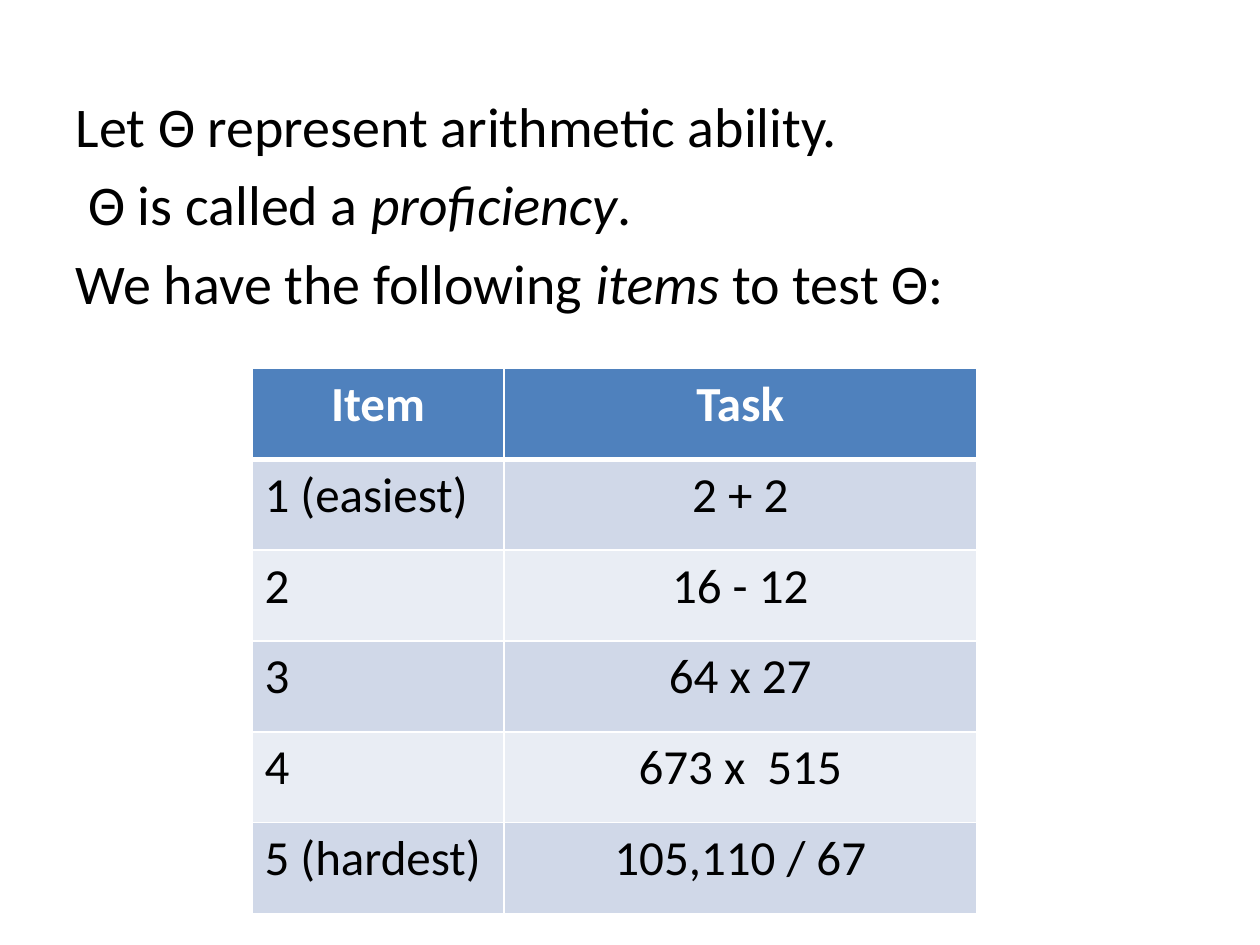
from lxml import etree
from pptx import Presentation, util as u
from pptx.dml.color import RGBColor
from pptx.enum import text
from pptx.oxml import ns

WIDTH, HEIGHT = u.Inches(10), u.Inches(7.5)
FONT = "Calibri"
WHITE, BLACK, HEADER = "FFFFFF", "000000", "4F81BD"
BANDS = ("D0D8E8", "E9EDF4")

# Each statement is a list of (wording, italic) runs
STATEMENTS = [
    [("Let Θ represent arithmetic ability.", False)],
    [(" Θ is called a ", False), ("proficiency", True), (".", False)],
    [("We have the following ", False), ("items", True), (" to test Θ:", False)],
]
ITEMS = [
    ("Item", "Task"),
    ("1 (easiest)", "2 + 2"),
    ("2", "16 - 12"),
    ("3", "64 x 27"),
    ("4", "673 x  515"),
    ("5 (hardest)", "105,110 / 67"),
]


def color(value):
    return RGBColor.from_string(value)


def share(left, top, width, height):
    """Turn shares of the slide's size into a box."""
    return (int(left * WIDTH), int(top * HEIGHT),
            int(width * WIDTH), int(height * HEIGHT))


def add_run(paragraph, wording, size, ink, bold=False, italic=False):
    run = paragraph.add_run()
    run.text = wording
    font = run.font
    font.name, font.size = FONT, u.Pt(size)
    font.bold, font.italic = bold, italic
    font.color.rgb = color(ink)


def add_border(cell, side, points):
    line = etree.SubElement(cell._tc.get_or_add_tcPr(), ns.qn(f"a:ln{side}"),
                            w=str(u.Pt(points)))
    fill = etree.SubElement(line, ns.qn("a:solidFill"))
    etree.SubElement(fill, ns.qn("a:srgbClr"), val=WHITE)


def place_statements(body, box):
    body.left, body.top, body.width, body.height = box
    frame = body.text_frame
    for number, runs in enumerate(STATEMENTS):
        paragraph = frame.add_paragraph() if number else frame.paragraphs[0]
        etree.SubElement(paragraph._p.get_or_add_pPr(), ns.qn("a:buNone"))
        for wording, italic in runs:
            add_run(paragraph, wording, 32, BLACK, italic=italic)


def place_items(slide, box):
    table = slide.shapes.add_table(len(ITEMS), 2, *box).table
    item_width = int(box[2] * 8 / 23)
    table.columns[0].width = item_width
    table.columns[1].width = box[2] - item_width
    for row, entries in enumerate(ITEMS):
        is_header = row == 0
        for column, wording in enumerate(entries):
            cell = table.cell(row, column)
            # The rule under the header is heavier
            for side in "LRTB":
                heavy = (row, side) in ((0, "B"), (1, "T"))
                add_border(cell, side, 3 if heavy else 1)
            cell.fill.solid()
            cell.fill.fore_color.rgb = color(
                HEADER if is_header else BANDS[(row - 1) % 2])
            paragraph = cell.text_frame.paragraphs[0]
            if is_header or column == 1:
                paragraph.alignment = text.PP_ALIGN.CENTER
            add_run(paragraph, wording, 28, WHITE if is_header else BLACK,
                    bold=is_header)


def main():
    deck = Presentation()
    deck.slide_width, deck.slide_height = WIDTH, HEIGHT
    slide = deck.slides.add_slide(deck.slide_layouts[1])
    # This slide has no title
    title = slide.shapes.title.element
    title.getparent().remove(title)
    place_statements(slide.placeholders[1], share(0.05, 0.09, 0.9, 0.855))
    place_items(slide, share(0.2, 0.39, 0.575, 0.577))
    deck.save("out.pptx")


if __name__ == "__main__":
    main()
